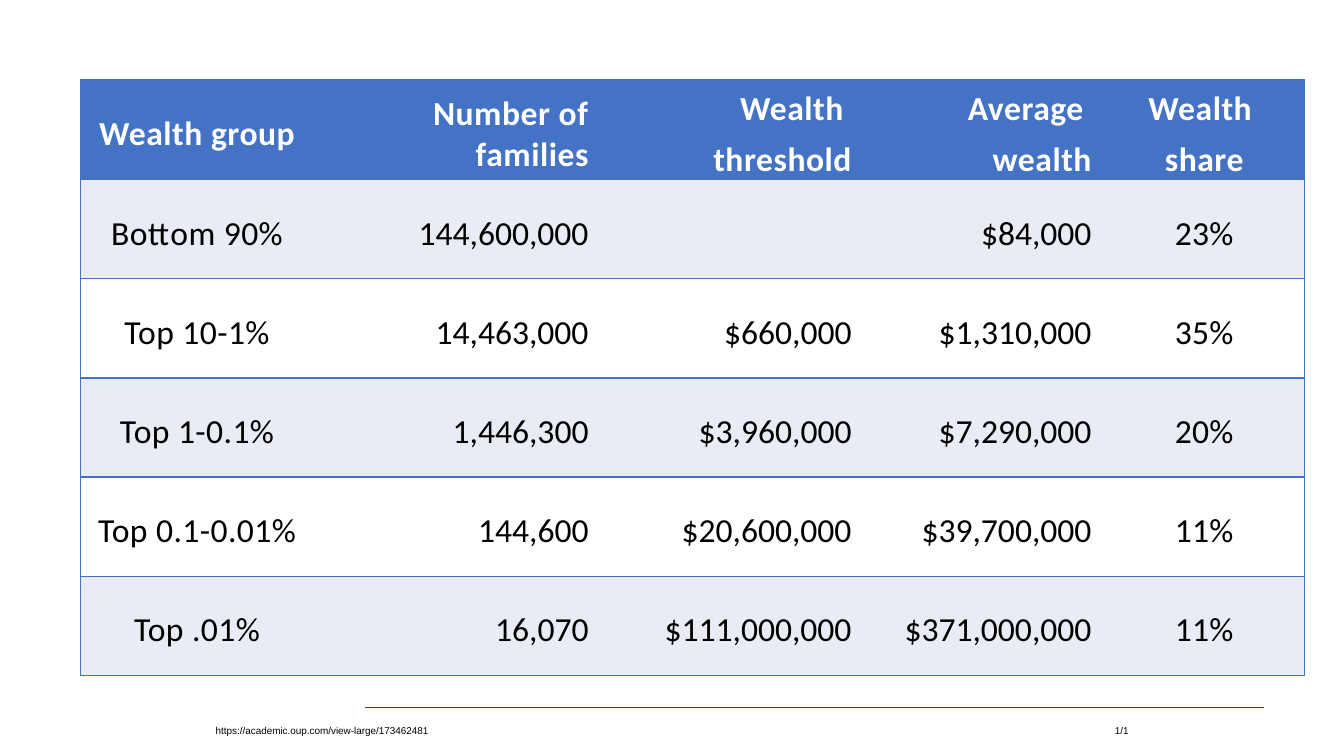
from pptx import Presentation
from pptx.dml.color import RGBColor
from pptx.enum.shapes import MSO_CONNECTOR
from pptx.enum.text import MSO_ANCHOR, PP_ALIGN
from pptx.oxml.ns import qn
from pptx.util import Pt
from lxml.etree import SubElement

BLUE, PALE, WHITE, BLACK = "4472C4", "E9EBF5", "FFFFFF", "000000"
PLAIN_TABLE_STYLE = "{2D5ABB26-0587-4C30-8999-92F81FD0307C}"
COLUMN_WIDTHS = [159.1, 203.8, 187.9, 171.4, 151.9]
ROW_HEIGHT = 70.8
CENTER, RIGHT = PP_ALIGN.CENTER, PP_ALIGN.RIGHT
ALIGNMENTS = [CENTER, RIGHT, RIGHT, RIGHT, CENTER]
HEADER = [
    ["Wealth group"],
    ["Number of families"],
    ["Wealth ", "threshold"],
    ["Average ", "wealth"],
    ["Wealth ", "share"],
]
GROUPS = [
    ["Bottom 90%", "144,600,000", "", "$84,000", "23%"],
    ["Top 10-1%", "14,463,000", "$660,000", "$1,310,000", "35%"],
    ["Top 1-0.1%", "1,446,300", "$3,960,000", "$7,290,000", "20%"],
    ["Top 0.1-0.01%", "144,600", "$20,600,000", "$39,700,000", "11%"],
    ["Top .01%", "16,070", "$111,000,000", "$371,000,000", "11%"],
]
HEADER_SPACING = 0.4
COLUMN_SPACINGS = [0.3, 0, 0, 0, 0.2]


def color(value):
    return RGBColor.from_string(value)


def format_font(font, name, size, value, bold=False):
    font.name = name
    font.size = Pt(size)
    font.bold = bold
    font.color.rgb = color(value)


def add_border(cell, side):
    border = SubElement(cell._tc.get_or_add_tcPr(), qn(f"a:ln{side}"), w=str(Pt(1)))
    fill = SubElement(border, qn("a:solidFill"))
    SubElement(fill, qn("a:srgbClr"), val=BLUE)


def fill_cell(cell, lines, alignment, indent, spacing, fill, font_color, bold):
    cell.margin_left = cell.margin_right = cell.margin_bottom = 0
    cell.margin_top = Pt(6.6)
    cell.vertical_anchor = MSO_ANCHOR.MIDDLE
    cell.fill.solid()
    cell.fill.fore_color.rgb = color(fill)
    cell.text_frame.text = "\n".join(lines)
    for index, paragraph in enumerate(cell.text_frame.paragraphs):
        paragraph.alignment = alignment
        paragraph._p.get_or_add_pPr().set("marL", str(Pt(indent)))
        if index:
            paragraph.space_before = Pt(7.3)
        for run in paragraph.runs:
            format_font(run.font, "Calibri", 24, font_color, bold)
            run._r.get_or_add_rPr().set("spc", str(round(spacing * 100)))


def add_wealth_table(slide):
    rows = [HEADER] + [[[text] for text in group] for group in GROUPS]
    frame = slide.shapes.add_table(
        len(rows), len(COLUMN_WIDTHS), Pt(57.6), Pt(56.9),
        Pt(sum(COLUMN_WIDTHS)), Pt(ROW_HEIGHT * len(rows)))
    table = frame.table
    table.horz_banding = False
    table._tbl.find(".//" + qn("a:tableStyleId")).text = PLAIN_TABLE_STYLE
    for column, width in zip(table.columns, COLUMN_WIDTHS):
        column.width = Pt(width)
    last = len(COLUMN_WIDTHS) - 1
    for row_index, row in enumerate(rows):
        table.rows[row_index].height = Pt(ROW_HEIGHT)
        is_header = row_index == 0
        fill = BLUE if is_header else PALE if row_index % 2 else WHITE
        for column_index, lines in enumerate(row):
            cell = table.cell(row_index, column_index)
            sides = ("L" if column_index == 0 else "") + ("R" if column_index == last else "") + "TB"
            for side in sides:
                add_border(cell, side)
            fill_cell(
                cell, lines, ALIGNMENTS[column_index], 9 if column_index else 7.2,
                HEADER_SPACING if is_header else COLUMN_SPACINGS[column_index],
                fill, WHITE if is_header else BLACK, is_header)


def add_rule(slide, left, right, top):
    rule = slide.shapes.add_connector(
        MSO_CONNECTOR.STRAIGHT, Pt(left), Pt(top), Pt(right), Pt(top))
    rule.line.color.rgb = color("0C4C88")
    rule.line.width = Pt(0.5)
    SubElement(rule._element.spPr, qn("a:effectLst"))


def add_footer(slide, text, left, width):
    box = slide.shapes.add_textbox(Pt(left), Pt(517), Pt(width), Pt(9.4))
    text_frame = box.text_frame
    text_frame.margin_left = Pt(0.9)
    text_frame.margin_right = text_frame.margin_bottom = 0
    text_frame.margin_top = Pt(0.9)
    text_frame.word_wrap = False
    text_frame.text = text
    format_font(text_frame.paragraphs[0].runs[0].font, "Arial", 7.1, BLACK)


def main():
    presentation = Presentation()
    presentation.slide_width = Pt(960)
    presentation.slide_height = Pt(540)
    slide = presentation.slides.add_slide(presentation.slide_layouts[6])
    add_rule(slide, 260.6, 902.9, 505)
    add_footer(slide, "https://academic.oup.com/view-large/173462481", 153.2, 153.4)
    add_footer(slide, "1/1", 795.5, 11.5)
    add_wealth_table(slide)
    presentation.save("out.pptx")


if __name__ == "__main__":
    main()
